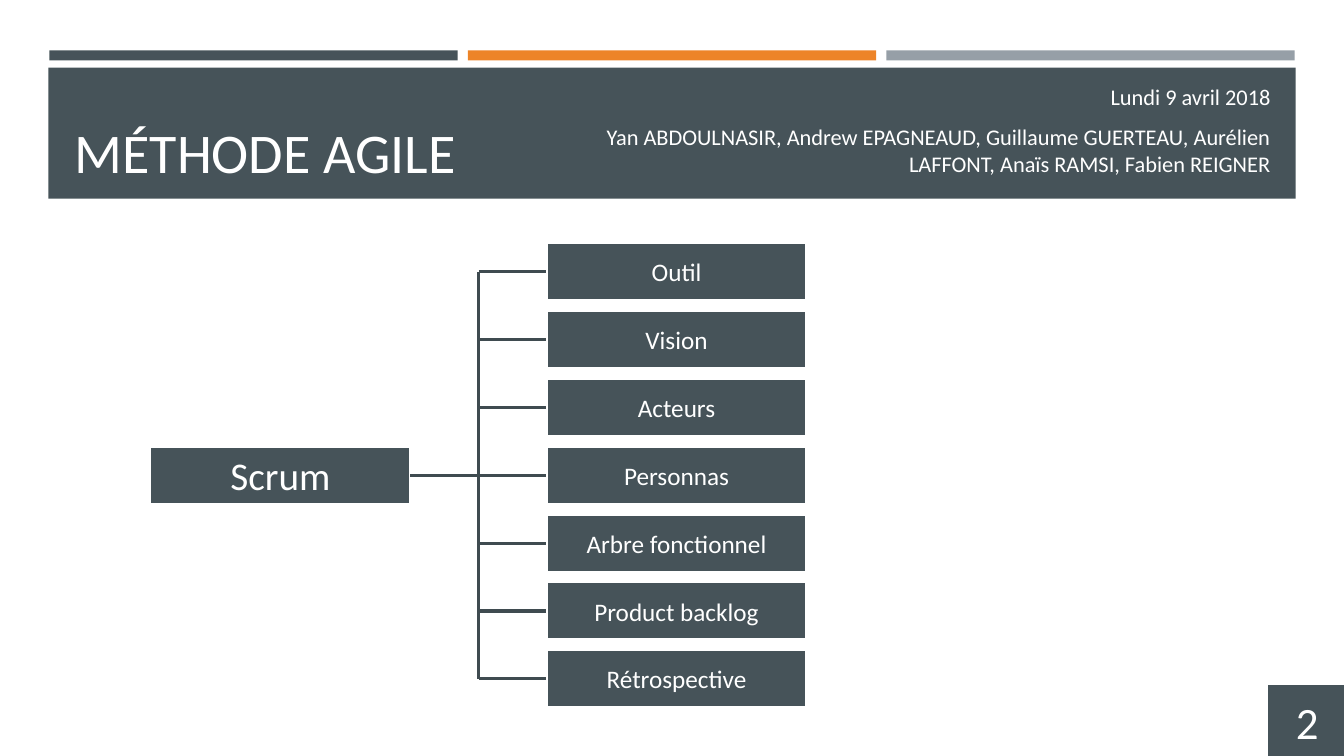
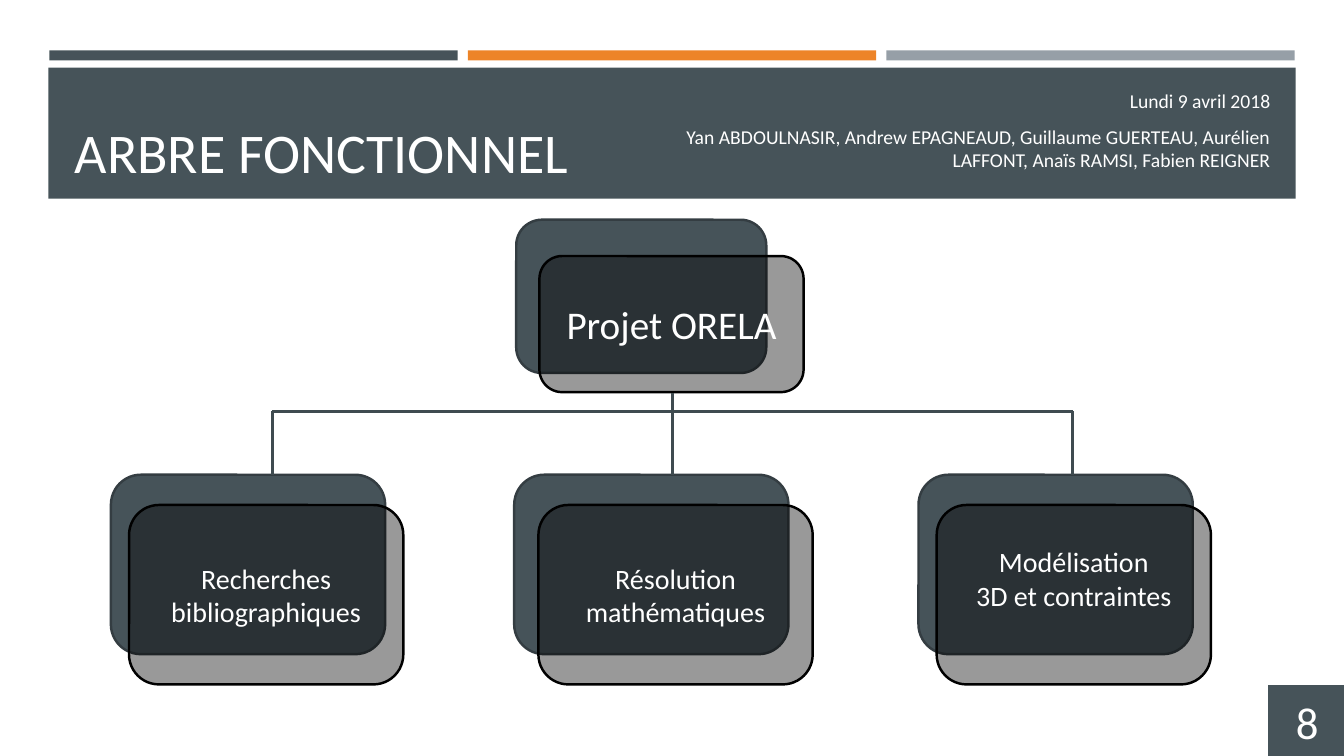
from lxml import etree
from pptx import Presentation
from pptx.dml.color import RGBColor
from pptx.enum.shapes import MSO_CONNECTOR, MSO_SHAPE
from pptx.enum.text import MSO_ANCHOR, PP_ALIGN
from pptx.oxml.ns import qn
from pptx.util import Inches, Pt

# Shared style
FONT = "Calibri"
SLATE = RGBColor(0x46, 0x53, 0x59)
ORANGE = RGBColor(0xED, 0x84, 0x28)
GREY = RGBColor(0x96, 0x9F, 0xA7)
EDGE = RGBColor(0x34, 0x3D, 0x42)
LINK = RGBColor(0x3F, 0x4B, 0x50)
WHITE = RGBColor(0xFF, 0xFF, 0xFF)
BLACK = RGBColor(0, 0, 0)

# Content
HEADER = ["Lundi 9 avril 2018",
          "Yan ABDOULNASIR, Andrew EPAGNEAUD, Guillaume GUERTEAU, "
          "Aurélien LAFFONT, Anaïs RAMSI, Fabien REIGNER"]
SCRUM_TOPICS = ["Outil", "Vision", "Acteurs", "Personnas", "Arbre fonctionnel",
                "Product backlog", "Rétrospective"]
PROJECT = "Projet ORELA"
# Paragraphs, left of the back card, left of the front card, bottom inset
BRANCHES = [(["Recherches bibliographiques"], 1.1, 1.28, 0.05),
            (["Résolution mathématiques"], 5.1, 5.34, 0.05),
            (["Modélisation", "3D et contraintes"], 9.11, 9.29, 0.38)]


def write(tf, lines, size=18, align=PP_ALIGN.CENTER, anchor=MSO_ANCHOR.MIDDLE,
          before=0, after=0):
    tf.word_wrap = True
    tf.vertical_anchor = anchor
    for i, line in enumerate(lines):
        p = tf.paragraphs[0] if i == 0 else tf.add_paragraph()
        p.alignment = align
        p.space_before, p.space_after = Pt(before), Pt(after)
        r = p.add_run()
        r.text = line
        r.font.name, r.font.size = FONT, Pt(size)
        r.font.color.rgb = WHITE


def box(s, x, y, w, h, fill=SLATE, line=None, kind=MSO_SHAPE.RECTANGLE, alpha=None):
    sp = s.shapes.add_shape(kind, Inches(x), Inches(y), Inches(w), Inches(h))
    sp.shadow.inherit = False
    sp.fill.solid()
    sp.fill.fore_color.rgb = fill
    if alpha is not None:
        color = sp.fill._xPr.find(qn("a:solidFill"))[0]
        etree.SubElement(color, qn("a:alpha"), val=str(alpha * 1000))
    if line is None:
        sp.line.fill.background()
    else:
        sp.line.color.rgb = line
        sp.line.width = Pt(1.75)
    return sp


def label_box(s, text, x, y, w, h, size=18):
    write(box(s, x, y, w, h, line=WHITE).text_frame, [text], size)


def link(s, x1, y1, x2, y2):
    c = s.shapes.add_connector(MSO_CONNECTOR.STRAIGHT, Inches(x1), Inches(y1),
                               Inches(x2), Inches(y2))
    c.line.color.rgb = LINK
    c.line.width = Pt(2.25)
    etree.SubElement(c._element.spPr, qn("a:effectLst"))


def card(s, lines, back, front, size, bottom=0.05):
    """Slate rounded card with a translucent captioned card over it."""
    kind = MSO_SHAPE.ROUNDED_RECTANGLE
    box(s, *back, line=EDGE, kind=kind)
    tf = box(s, *front, fill=BLACK, line=BLACK, kind=kind, alpha=40).text_frame
    tf.margin_bottom = Inches(bottom)
    write(tf, lines, size)


def set_up_layout(layout, s):
    """Place the title and move the bands, drawn on s, into the layout."""
    title = layout.placeholders[0]
    title.left, title.top = Inches(0.64), Inches(0.77)
    title.width, title.height = Inches(12.06), Inches(1.11)
    bands = [box(s, 0.49 + 4.15 * i, 0.5, 4.05, 0.1, fill)
             for i, fill in enumerate([SLATE, ORANGE, GREY])]
    bands.append(box(s, 0.48, 0.67, 12.37, 1.3))
    for sp in bands:
        layout.shapes.element.append(sp.element)


def start_slide(s, title, number, header_left, header_size):
    write(s.shapes.title.text_frame, [title], 40, PP_ALIGN.LEFT, MSO_ANCHOR.BOTTOM)
    tb = s.shapes.add_textbox(Inches(header_left), Inches(0.77),
                              Inches(12.7 - header_left), Inches(1.04))
    write(tb.text_frame, HEADER, header_size, PP_ALIGN.RIGHT,
          before=0.2 * header_size, after=6)
    label_box(s, number, 12.56, 6.78, 0.81, 0.76, 32)


def build_scrum(s):
    start_slide(s, "MÉTHODE AGILE", "2", 5.81, 16)
    w, h, left, top = 2.58, 0.57, 5.42, 2.41
    pitch = 4.04 / (len(SCRUM_TOPICS) - 1)
    trunk = 4.75
    tops = [top + pitch * i for i in range(len(SCRUM_TOPICS))]
    centres = [y + h / 2 for y in tops]
    middle = len(tops) // 2

    # Root and topics
    label_box(s, "Scrum", 1.49, tops[middle], w, h, 28)
    for text, y in zip(SCRUM_TOPICS, tops):
        label_box(s, text, left, y, w, h)

    # Bracket
    link(s, 1.49 + w, centres[middle], trunk, centres[middle])
    link(s, trunk, centres[0], trunk, centres[-1])
    for y in centres:
        link(s, trunk, y, left, y)


def build_tree(s):
    start_slide(s, "ARBRE FONCTIONNEL", "8", 6.67, 14)
    w, h, top = 2.72, 1.78, 4.71

    # Cards
    card(s, [PROJECT], (5.12, 2.18, 2.48, 1.52), (5.35, 2.54, 2.62, 1.35), 28)
    for lines, back, front, bottom in BRANCHES:
        card(s, lines, (back, top, w, h), (front, top + 0.3, w, h), 20, bottom)

    # Links
    first, centre, last, bar = 2.7, 6.67, 10.64, 4.08
    link(s, first, bar, last, bar)
    link(s, centre, 3.9, centre, top)
    for x in (first, last):
        link(s, x, bar, x, top)


def main():
    prs = Presentation()
    prs.slide_width, prs.slide_height = Inches(13.33), Inches(7.5)
    layout = prs.slide_layouts[5]
    scrum, tree = [prs.slides.add_slide(layout) for _ in range(2)]
    set_up_layout(layout, scrum)
    build_scrum(scrum)
    build_tree(tree)
    prs.save("out.pptx")


if __name__ == "__main__":
    main()
